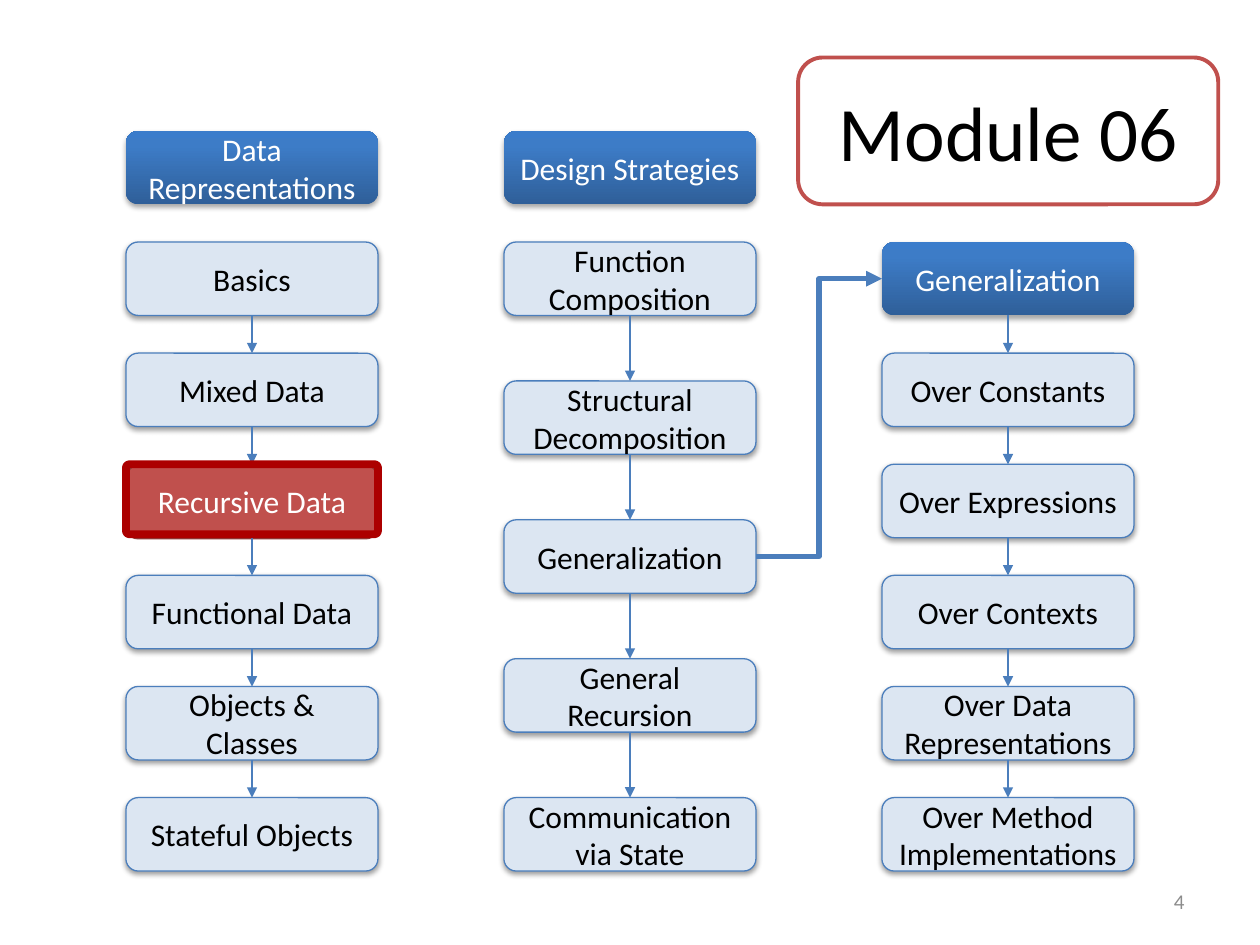
"""Build the course module map slide with Module 06 highlighted."""
from copy import deepcopy
from dataclasses import dataclass
from itertools import pairwise
from typing import Optional

from lxml import etree
from pptx import Presentation
from pptx.dml.color import RGBColor
from pptx.enum.shapes import MSO_CONNECTOR, MSO_SHAPE
from pptx.enum.text import MSO_ANCHOR, PP_ALIGN
from pptx.oxml.ns import qn
from pptx.util import Cm, Pt

ROUNDED = MSO_SHAPE.ROUNDED_RECTANGLE
STRAIGHT, ELBOW = MSO_CONNECTOR.STRAIGHT, MSO_CONNECTOR.ELBOW
CENTER, RIGHT = PP_ALIGN.CENTER, PP_ALIGN.RIGHT
MIDDLE = MSO_ANCHOR.MIDDLE
TOP_SITE, LEFT_SITE, BOTTOM_SITE, RIGHT_SITE = range(4)

FONT = "Calibri"
BLUE, BLACK, WHITE = "4B7EBC", "000000", "FFFFFF"
HEADER_STOPS = ((0, "2F5F99"), (0.8, "3D7CC7"), (1, "3A7CCB"))
BOX_WIDTH, BOX_HEIGHT = 5.08, 1.48
FIRST_ROW, ROW_PITCH, WIDE_PITCH = 4.88, 2.24, 2.8


@dataclass(frozen=True)
class BoxStyle:
    fill: Optional[str] = None
    line: Optional[str] = None
    line_width: float = 0.75
    text: str = BLACK
    size: float = 18
    shadow_alpha: int = 0
    shadow_distance: int = 0


@dataclass(frozen=True)
class Column:
    left: float
    header: str
    header_top: float
    topics: tuple
    first_top: float
    pitch: float
    header_arrow: bool = False


TOPIC = BoxStyle("DCE6F2", BLUE, shadow_alpha=38, shadow_distance=20000)
HEADER = BoxStyle(text=WHITE, shadow_alpha=35, shadow_distance=23000)
CURRENT = BoxStyle("C0504D", "8E3B39", 2, WHITE)
TITLE = BoxStyle(line="C0504D", line_width=2.25, size=44)
HIGHLIGHT = BoxStyle(line="AC0000", line_width=4.5)
CURRENT_TOPIC = "Recursive Data"

COLUMNS = (
    Column(2.54, "Data Representations", FIRST_ROW - ROW_PITCH,
           ("Basics", "Mixed Data", CURRENT_TOPIC, "Functional Data",
            "Objects & Classes", "Stateful Objects"),
           FIRST_ROW, ROW_PITCH),
    Column(10.16, "Design Strategies", FIRST_ROW - ROW_PITCH,
           ("Function Composition", "Structural Decomposition", "Generalization",
            "General Recursion", "Communication via State"),
           FIRST_ROW, WIDE_PITCH),
    Column(17.78, "Generalization", FIRST_ROW,
           ("Over Constants", "Over Expressions", "Over Contexts",
            "Over Data Representations", "Over Method Implementations"),
           FIRST_ROW + ROW_PITCH, ROW_PITCH, True),
)


def color(hex_value: str) -> RGBColor:
    """Turn a hex string into a colour."""
    return RGBColor.from_string(hex_value)


def write(shape, text: str, size: float, text_color: str, align) -> None:
    """Set one formatted, vertically centred paragraph."""
    frame = shape.text_frame
    frame.word_wrap = True
    frame.vertical_anchor = MIDDLE
    frame.text = text
    paragraph = frame.paragraphs[0]
    paragraph.alignment = align
    for run in paragraph.runs:
        run.font.name = FONT
        run.font.size = Pt(size)
        run.font.color.rgb = color(text_color)


def add_shadow(shape, alpha: int, distance: int) -> None:
    """Give a shape a soft shadow below it."""
    effects = shape._element.spPr.find(qn("a:effectLst"))
    shadow = etree.SubElement(effects, qn("a:outerShdw"), blurRad="40000",
                              dist=str(distance), dir="5400000", rotWithShape="0")
    tint = etree.SubElement(shadow, qn("a:srgbClr"), val=BLACK)
    etree.SubElement(tint, qn("a:alpha"), val=str(alpha * 1000))


def fill_header(shape) -> None:
    """Fill a header with its three-stop vertical gradient."""
    shape.fill.gradient()
    shape.fill.gradient_angle = 90
    stop_list = shape._element.spPr.find(qn("a:gradFill")).find(qn("a:gsLst"))
    stop_list.append(deepcopy(stop_list[-1]))
    for stop, (position, hex_value) in zip(shape.fill.gradient_stops, HEADER_STOPS):
        stop.position = position
        stop.color.rgb = color(hex_value)


def add_box(slide, left: float, top: float, style: BoxStyle, text: str = "",
            width: float = BOX_WIDTH, height: float = BOX_HEIGHT):
    """Draw a rounded box, given in centimetres, and return it."""
    box = slide.shapes.add_shape(ROUNDED, Cm(left), Cm(top), Cm(width), Cm(height))
    box.shadow.inherit = False
    if style is HEADER:
        fill_header(box)
    elif style.fill:
        box.fill.solid()
        box.fill.fore_color.rgb = color(style.fill)
    else:
        box.fill.background()
    if style.line:
        box.line.color.rgb = color(style.line)
        box.line.width = Pt(style.line_width)
    else:
        box.line.fill.background()
    if style.shadow_alpha:
        add_shadow(box, style.shadow_alpha, style.shadow_distance)
    if text:
        write(box, text, style.size, style.text, CENTER)
    return box


def add_arrow(slide, source, target, kind=STRAIGHT, source_site: int = BOTTOM_SITE,
              target_site: int = TOP_SITE, width: float = 0.75) -> None:
    """Join two boxes with an arrow."""
    arrow = slide.shapes.add_connector(kind, 0, 0, 0, 0)
    arrow.begin_connect(source, source_site)
    arrow.end_connect(target, target_site)
    arrow.line.color.rgb = color(BLUE)
    arrow.line.width = Pt(width)
    etree.SubElement(arrow.line._get_or_add_ln(), qn("a:tailEnd"), type="triangle")
    etree.SubElement(arrow._element.spPr, qn("a:effectLst"))


def add_column(slide, column: Column) -> list:
    """Draw a header with its chain of topics and return header and topics."""
    header = add_box(slide, column.left, column.header_top, HEADER, column.header)
    topics = [
        add_box(slide, column.left, column.first_top + row * column.pitch,
                CURRENT if topic == CURRENT_TOPIC else TOPIC, topic)
        for row, topic in enumerate(column.topics)
    ]
    chain = [header, *topics] if column.header_arrow else topics
    for source, target in pairwise(chain):
        add_arrow(slide, source, target)
    return [header, *topics]


def main() -> None:
    """Build and save the slide."""
    deck = Presentation()
    deck.slide_width, deck.slide_height = Cm(25.4), Cm(19.05)
    slide = deck.slides.add_slide(deck.slide_layouts[6])

    data, strategies, generalizations = [add_column(slide, c) for c in COLUMNS]
    add_box(slide, 16.09, 1.16, TITLE, "Module 06", 8.47, 2.96)
    add_arrow(slide, strategies[3], generalizations[0], ELBOW,
              RIGHT_SITE, LEFT_SITE, 3)

    current_top = FIRST_ROW + COLUMNS[0].topics.index(CURRENT_TOPIC) * ROW_PITCH
    highlight = add_box(slide, COLUMNS[0].left, current_top, HIGHLIGHT, height=1.41)
    highlight.adjustments[0] = 0.05

    page_number = slide.shapes.add_textbox(Cm(18.2), Cm(17.66), Cm(5.93), Cm(1.01))
    write(page_number, "4", 12, "8C8C8C", RIGHT)
    deck.save("out.pptx")


if __name__ == "__main__":
    main()
